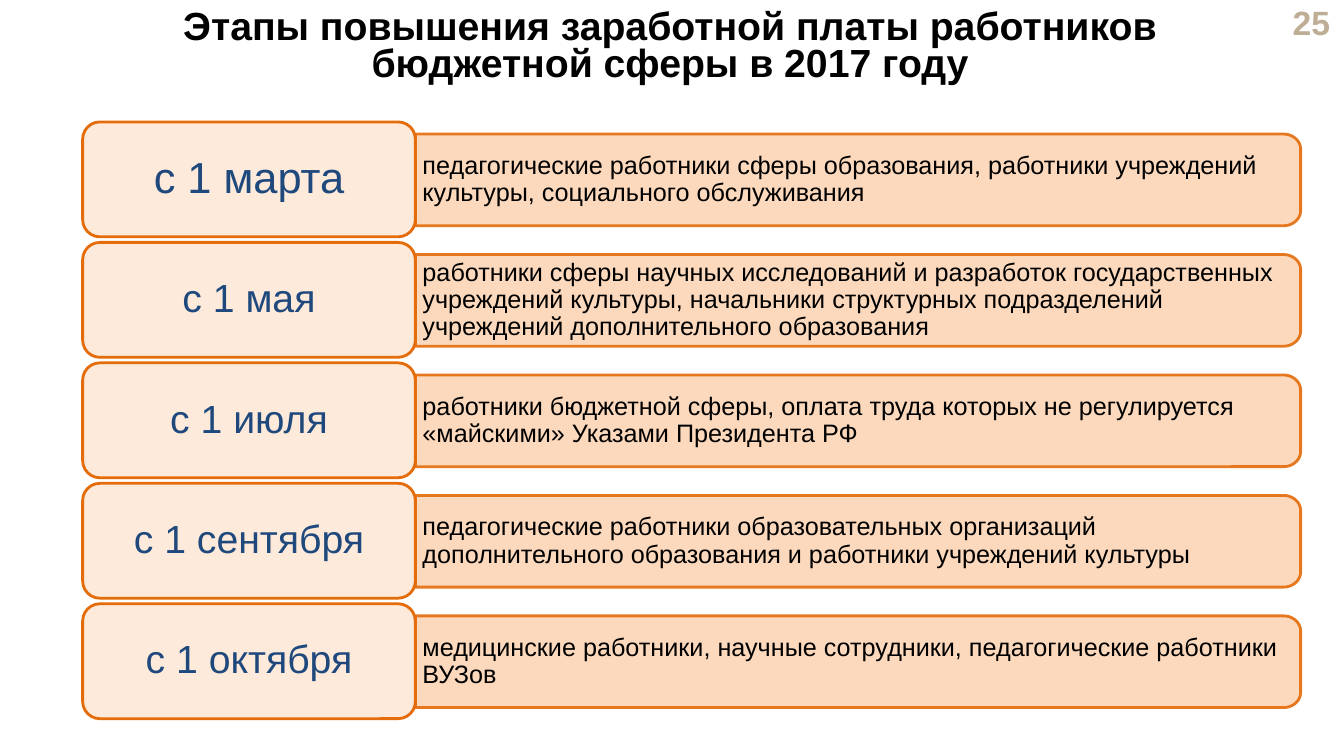
import math

import pptx
import pptx.dml.color
import pptx.enum.shapes
import pptx.enum.text
import pptx.oxml.ns
import pptx.util
from lxml import etree

Inches = pptx.util.Inches
RGBColor = pptx.dml.color.RGBColor
Align = pptx.enum.text.PP_ALIGN
Anchor = pptx.enum.text.MSO_ANCHOR

BLACK = RGBColor(0x00, 0x00, 0x00)
NAVY = RGBColor(0x1F, 0x49, 0x7D)
SAND = RGBColor(0xBF, 0xAE, 0x96)
ORANGE = RGBColor(0xE4, 0x6C, 0x0A)
PEACH = RGBColor(0xFC, 0xD5, 0xB5)
CREAM = RGBColor(0xFD, 0xEA, 0xDA)

TITLE = "Этапы повышения заработной платы работников бюджетной сферы в 2017 году"

# Date, date size in points, who gets the raise
STAGES = [
    ("с 1 марта", 31, "педагогические работники сферы образования, работники "
     "учреждений культуры, социального обслуживания"),
    ("с 1 мая", 28, "работники сферы научных исследований и разработок "
     "государственных учреждений культуры, начальники структурных "
     "подразделений учреждений дополнительного образования"),
    ("с 1 июля", 28, "работники бюджетной сферы, оплата труда которых не "
     "регулируется «майскими» Указами Президента РФ"),
    ("с 1 сентября", 28, "педагогические работники образовательных организаций "
     "дополнительного образования и работники учреждений культуры"),
    ("с 1 октября", 28, "медицинские работники, научные сотрудники, "
     "педагогические работники ВУЗов"),
]


class StageSlide:
    """Holds the text style and the current slide."""

    font_name = "Arial"

    def __init__(self, deck):
        self.page = deck.slides.add_slide(deck.slide_layouts[5])

    def set_text(self, box, text, size, color, align, anchor, bold=False,
                 spacing=1.0, insets=(0.1, 0.05, 0.1, 0.05)):
        left, top, right, bottom = map(Inches, insets)
        frame = box.text_frame
        frame_format = {
            "word_wrap": True,
            "auto_size": pptx.enum.text.MSO_AUTO_SIZE.NONE,
            "vertical_anchor": anchor,
            "margin_left": left, "margin_top": top,
            "margin_right": right, "margin_bottom": bottom,
        }
        para = frame.paragraphs[0]
        para_format = {"alignment": align, "line_spacing": spacing}
        span = para.add_run()
        span.text = text
        font_format = {"name": self.font_name, "size": pptx.util.Pt(size),
                       "bold": bold}
        for target, values in ((frame, frame_format), (para, para_format),
                               (span.font, font_format)):
            for name, value in values.items():
                setattr(target, name, value)
        span.font.color.rgb = color

    def paint(self, shape, fill, alpha=None):
        shape.shadow.inherit = False
        shape.fill.solid()
        shape.fill.fore_color.rgb = fill
        shape.line.color.rgb = ORANGE
        shape.line.width = pptx.util.Pt(2)
        if alpha:
            for color in shape.element.spPr.iter(pptx.oxml.ns.qn("a:srgbClr")):
                etree.SubElement(color, pptx.oxml.ns.qn("a:alpha"),
                                 val=str(alpha * 1000))

    def title(self, text, left, top, width, height):
        box = self.page.shapes.title
        box.left, box.top, box.width, box.height = map(
            Inches, (left, top, width, height))
        self.set_text(box, text, 28, BLACK, Align.CENTER, Anchor.TOP, True, 0.8)

    def page_number(self, text, left, top, width, height):
        box = self.page.shapes.add_textbox(
            *map(Inches, (left, top, width, height)))
        self.set_text(box, text, 24, SAND, Align.RIGHT, Anchor.MIDDLE, True)

    def panel(self, text, left, top, width, height):
        """Box with square left corners and rounded right ones."""
        radius_x, radius_y = 0.17, 0.15
        right, bottom = left + width, top + height
        angles = [math.radians(step * 10) for step in range(10)]
        upper = [(right - radius_x + radius_x * math.sin(angle),
                  top + radius_y - radius_y * math.cos(angle))
                 for angle in angles]
        lower = [(x, top + bottom - y) for x, y in reversed(upper)]
        points = [(Inches(x), Inches(y))
                  for x, y in upper + lower + [(left, bottom)]]
        builder = self.page.shapes.build_freeform(Inches(left), Inches(top))
        builder.add_line_segments(points, close=True)
        shape = builder.convert_to_shape()
        self.paint(shape, PEACH, 90)
        self.set_text(shape, text, 18, BLACK, Align.LEFT, Anchor.MIDDLE,
                      spacing=0.9, insets=(0.07, 0.08, 0.11, 0.08))

    def date_label(self, text, size, left, top, width, height):
        shape = self.page.shapes.add_shape(
            pptx.enum.shapes.MSO_SHAPE.ROUNDED_RECTANGLE,
            *map(Inches, (left, top, width, height)))
        shape.adjustments[0] = 0.15
        self.paint(shape, CREAM)
        self.set_text(shape, text, size, NAVY, Align.CENTER, Anchor.MIDDLE,
                      spacing=0.9, insets=(0.18, 0.12, 0.18, 0.12))


def main():
    deck = pptx.Presentation()
    deck.slide_width, deck.slide_height = Inches(13.33), Inches(7.5)
    slide = StageSlide(deck)

    # Heading
    slide.page_number("25", 12.44, 0.05, 0.85, 0.34)
    slide.title(TITLE, 0.75, 0.05, 11.79, 0.88)

    # One row for each stage
    first_top, last_top = 1.21, 5.99
    pitch = (last_top - first_top) / (len(STAGES) - 1)
    for row, (date, size, workers) in enumerate(STAGES):
        top = first_top + row * pitch
        slide.panel(workers, 4.12, top + 0.12, 8.78, 0.91)
        slide.date_label(date, size, 0.82, top, 3.3, 1.14)

    deck.save("out.pptx")


if __name__ == "__main__":
    main()
